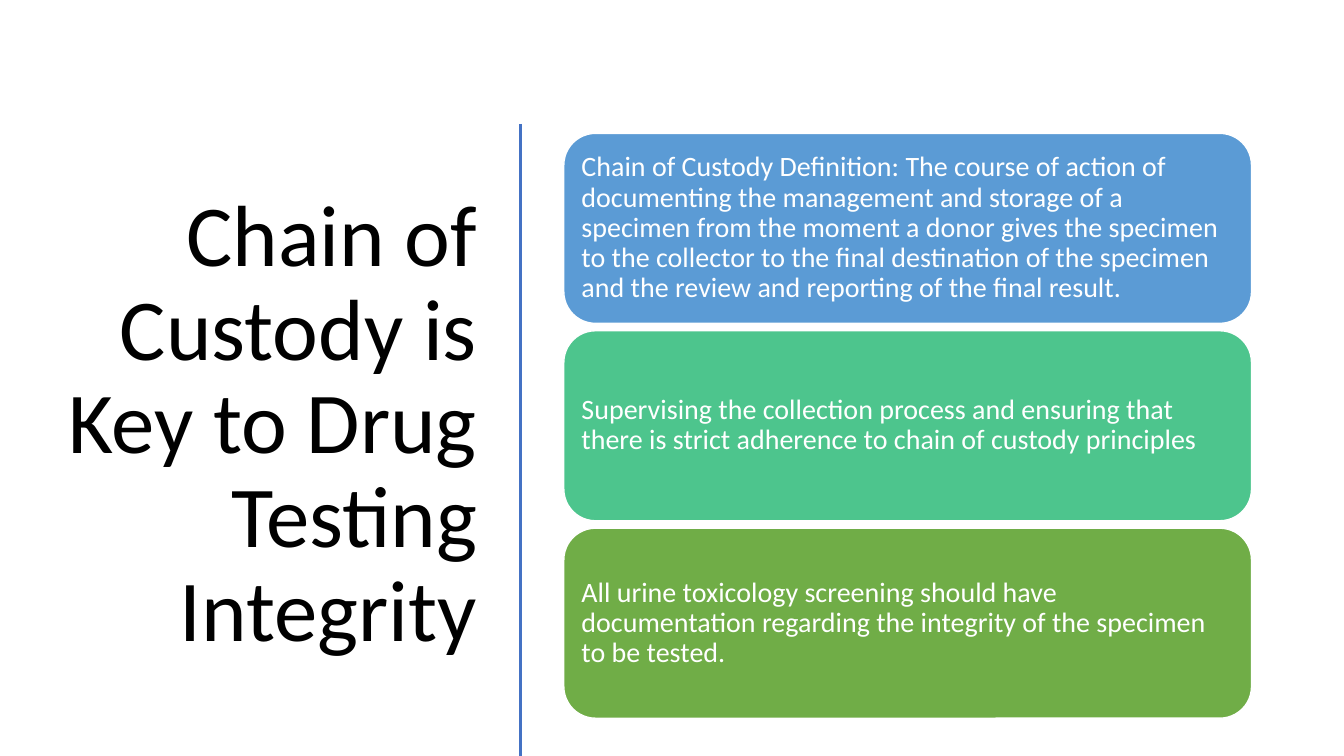
from dataclasses import dataclass

from lxml import etree
from pptx import Presentation
from pptx.dml.color import RGBColor
from pptx.enum.shapes import MSO_CONNECTOR, MSO_SHAPE
from pptx.enum.text import MSO_ANCHOR, PP_ALIGN
from pptx.oxml.ns import qn
from pptx.util import Pt

PX = 9525
ROUND = MSO_SHAPE.ROUNDED_RECTANGLE
STRAIGHT = MSO_CONNECTOR.STRAIGHT
MIDDLE = MSO_ANCHOR.MIDDLE
LEFT, RIGHT = PP_ALIGN.LEFT, PP_ALIGN.RIGHT


@dataclass(frozen=True)
class Theme:
    font: str = "Calibri"
    title_size: int = 62
    card_size: int = 20
    dark: str = "000000"
    light: str = "FFFFFF"
    rule: str = "4472C4"
    fills: tuple = ("5B9BD5", "4DC58D", "70AD47")


THEME = Theme()
TITLE = "Chain of Custody is Key to Drug Testing Integrity"
CARDS = (
    "Chain of Custody Definition: The course of action of documenting the "
    "management and storage of a specimen from the moment a donor gives the "
    "specimen to the collector to the final destination of the specimen and "
    "the review and reporting of the final result.",
    "Supervising the collection process and ensuring that there is strict "
    "adherence to chain of custody principles",
    "All urine toxicology screening should have documentation regarding the "
    "integrity of the specimen to be tested.",
)


def emu(*sizes):
    return [size * PX for size in sizes]


def rgb(code):
    return RGBColor.from_string(code)


def write(shape, text, size, color, align):
    frame = shape.text_frame
    frame.word_wrap = True
    frame.vertical_anchor = MIDDLE
    frame.text = text
    para = frame.paragraphs[0]
    para.alignment = align
    para.line_spacing = 0.9
    font = para.runs[0].font
    font.name = THEME.font
    font.size = Pt(size)
    font.color.rgb = rgb(color)


def add_title(slide, box):
    shape = slide.shapes.add_textbox(*emu(*box))
    write(shape, TITLE, THEME.title_size, THEME.dark, RIGHT)


def add_rule(slide, x, top, end):
    line = slide.shapes.add_connector(STRAIGHT, *emu(x, top, x, end))
    line.line.color.rgb = rgb(THEME.rule)
    line.line.width = Pt(2)
    etree.SubElement(line._element.spPr, qn("a:effectLst"))


def add_card(slide, box, text, fill):
    card = slide.shapes.add_shape(ROUND, *emu(*box))
    card.shadow.inherit = False
    card.fill.solid()
    card.fill.fore_color.rgb = rgb(fill)
    card.line.color.rgb = rgb(THEME.light)
    card.line.width = Pt(1)
    frame = card.text_frame
    frame.margin_left = frame.margin_right = 8 * PX
    frame.margin_top = frame.margin_bottom = 8 * PX
    write(card, text, THEME.card_size, THEME.light, LEFT)


def add_cards(slide, box, gap):
    """Stack the cards in equal heights that fill the box."""
    left, top, width, height = box
    step = (height + gap) // len(CARDS)
    for row, (text, fill) in enumerate(zip(CARDS, THEME.fills)):
        add_card(slide, (left, top + row * step, width, step - gap), text, fill)


def main():
    deck = Presentation()
    deck.slide_width, deck.slide_height = emu(1280, 720)
    slide = deck.slides.add_slide(deck.slide_layouts[6])
    add_title(slide, (50, 112, 414, 587))
    add_rule(slide, 496, 118, 720)
    add_cards(slide, (537, 127, 655, 557), 7)
    deck.save("out.pptx")


if __name__ == "__main__":
    main()
